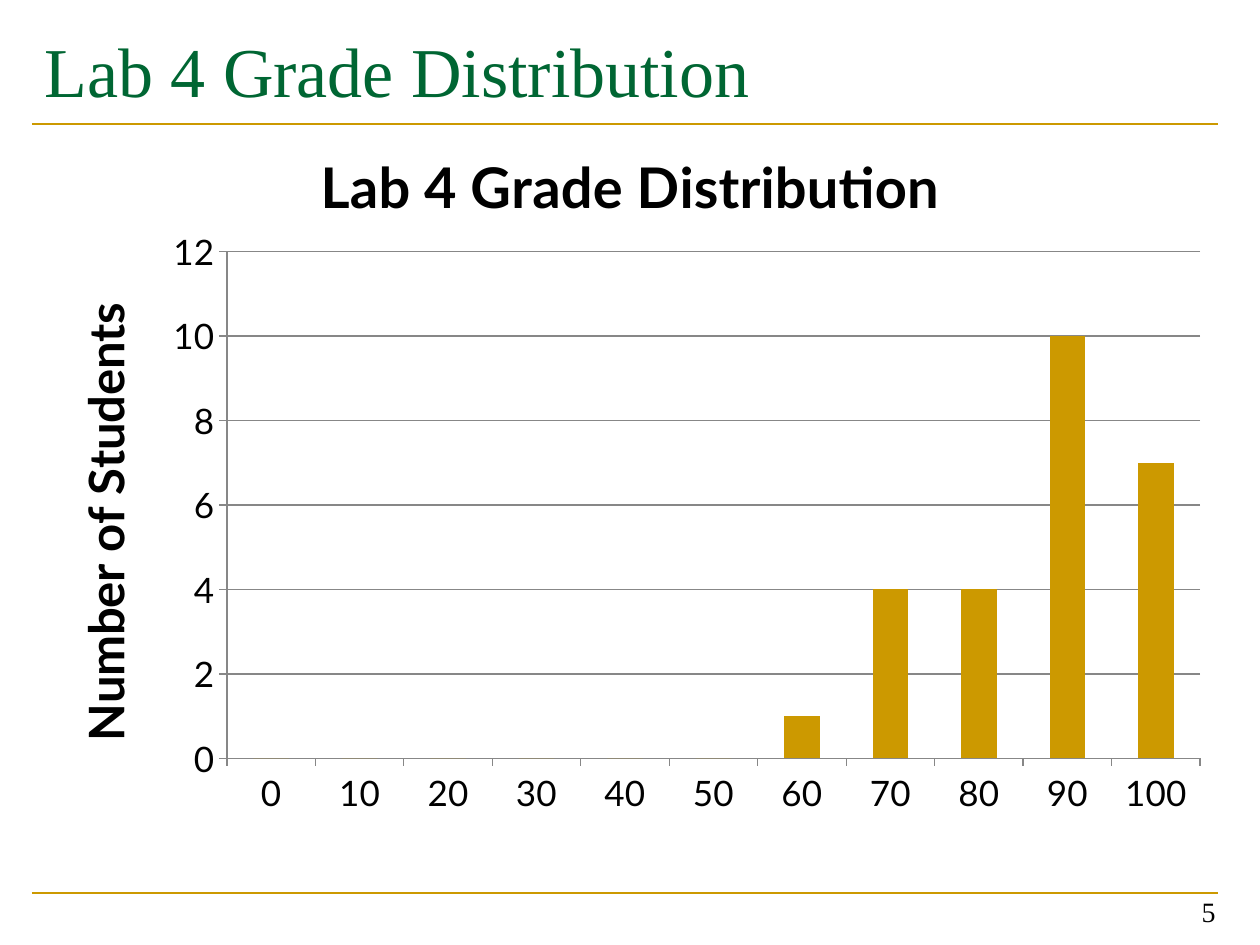
from dataclasses import dataclass

from lxml import etree
from pptx import Presentation
from pptx.chart.data import CategoryChartData
from pptx.dml.color import RGBColor
from pptx.enum.chart import XL_CHART_TYPE as ChartType, XL_TICK_MARK as Tick
from pptx.enum.shapes import MSO_CONNECTOR as Connector
from pptx.enum.text import MSO_ANCHOR as Anchor, PP_ALIGN as Align
from pptx.oxml import parse_xml
from pptx.oxml.ns import nsdecls, qn
from pptx.util import Pt

HEADING = "Lab 4 Grade Distribution"
VALUE_TITLE = "Number of Students"
PAGE_NUMBER = "5"
GRADES = range(0, 101, 10)
STUDENTS = [0, 0, 0, 0, 0, 0, 1, 4, 4, 10, 7]

SLIDE = (1260, 945)
TITLE_BOX = (32, 21, 1187, 147)
NUMBER_BOX = (934, 871, 294, 63)
CHART_BOX = (37, 116, 1187, 714)
PLOT_BOX = (225, 252, 974, 507)
RULE_LEFT, RULE_RIGHT = 32, 1218
RULE_TOPS = (124, 893)


@dataclass(frozen=True)
class Theme:
    green: str = "006633"
    gold: str = "CC9900"
    black: str = "000000"
    grey: str = "878787"
    serif: str = "Times New Roman"
    sans: str = "Lato"
    title: int = 40
    number: int = 16
    chart_title: int = 32
    axis_title: int = 28
    axis: int = 20
    rule: float = 1.5
    grid: float = 0.75


THEME = Theme()


def px(length):
    return round(length * 914400 / 126)


def place(shape, box):
    shape.left, shape.top, shape.width, shape.height = map(px, box)


def style_font(font, size, face, color, bold=False):
    font.size = Pt(size)
    font.name = face
    font.bold = bold
    font.color.rgb = RGBColor.from_string(color)


def style_line(line, color, width):
    line.color.rgb = RGBColor.from_string(color)
    line.width = Pt(width)


def write(frame, text, size, face=THEME.serif, color=THEME.black, bold=False, align=None):
    para = frame.paragraphs[0]
    para.alignment = align
    span = para.add_run()
    span.text = text
    style_font(span.font, size, face, color, bold)


def add_rule(page, top):
    rule = page.shapes.add_connector(
        Connector.STRAIGHT, px(RULE_LEFT), px(top), px(RULE_RIGHT), px(top))
    style_line(rule.line, THEME.gold, THEME.rule)
    etree.SubElement(rule.element.spPr, qn("a:effectLst"))


def set_plot_layout(chart):
    left, top, width, height = CHART_BOX
    x, y, w, h = PLOT_BOX
    shares = {"x": (x - left) / width, "y": (y - top) / height,
              "w": w / width, "h": h / height}
    modes = "".join(f'<c:{key}Mode val="edge"/>' for key in "xy")
    values = "".join(f'<c:{key} val="{share:.2f}"/>' for key, share in shares.items())
    plot_area = chart.element.find(".//" + qn("c:plotArea"))
    for layout in plot_area.findall(qn("c:layout")):
        plot_area.remove(layout)
    plot_area.insert(0, parse_xml(
        f'<c:layout {nsdecls("c")}><c:manualLayout><c:layoutTarget val="inner"/>'
        f'{modes}{values}</c:manualLayout></c:layout>'))


def add_grade_chart(page):
    data = CategoryChartData(number_format="0")
    data.categories = [str(grade) for grade in GRADES]
    data.add_series("Students", STUDENTS)
    chart = page.shapes.add_chart(
        ChartType.COLUMN_CLUSTERED, *map(px, CHART_BOX), data).chart
    chart.has_legend = False
    style_font(chart.font, THEME.axis, THEME.sans, THEME.black)
    write(chart.chart_title.text_frame, HEADING, THEME.chart_title,
          face=THEME.sans, bold=True)
    chart.chart_title.include_in_layout = False

    plot = chart.plots[0]
    plot.gap_width = 150
    plot.vary_by_categories = False
    fill = plot.series[0].format.fill
    fill.solid()
    fill.fore_color.rgb = RGBColor.from_string(THEME.gold)

    values = chart.value_axis
    write(values.axis_title.text_frame, VALUE_TITLE, THEME.axis_title,
          face=THEME.sans, bold=True)
    values.minimum_scale, values.maximum_scale, values.major_unit = 0, 12, 2
    values.has_major_gridlines = True
    style_line(values.major_gridlines.format.line, THEME.grey, THEME.grid)
    for axis in (chart.category_axis, values):
        axis.major_tick_mark = Tick.OUTSIDE
        axis.minor_tick_mark = Tick.NONE
        style_font(axis.tick_labels.font, THEME.axis, THEME.sans, THEME.black)
        style_line(axis.format.line, THEME.grey, THEME.grid)
    set_plot_layout(chart)


def main():
    deck = Presentation()
    deck.slide_width, deck.slide_height = map(px, SLIDE)
    page = deck.slides.add_slide(deck.slide_layouts.get_by_name("Title Only"))
    for top in RULE_TOPS:
        add_rule(page, top)

    title = page.shapes.title
    place(title, TITLE_BOX)
    title.text_frame.vertical_anchor = Anchor.TOP
    write(title.text_frame, HEADING, THEME.title, color=THEME.green, align=Align.LEFT)

    number = page.shapes.add_textbox(*map(px, NUMBER_BOX))
    number.text_frame.word_wrap = True
    number.text_frame.vertical_anchor = Anchor.BOTTOM
    write(number.text_frame, PAGE_NUMBER, THEME.number, align=Align.RIGHT)

    add_grade_chart(page)
    deck.save("out.pptx")


if __name__ == "__main__":
    main()
